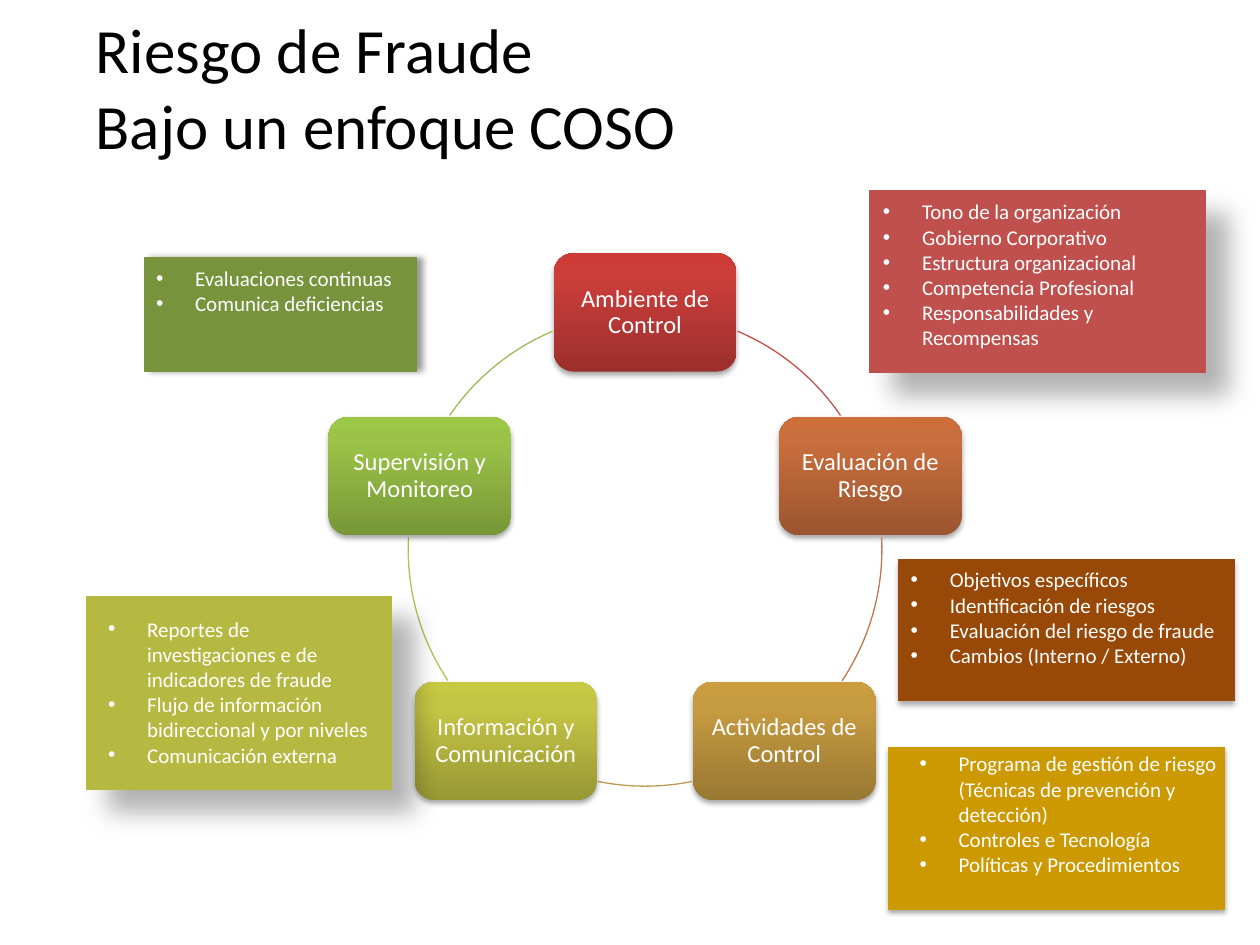
from dataclasses import dataclass
from math import cos, radians, sin

from lxml.etree import SubElement
from pptx import Presentation
from pptx.dml.color import RGBColor
from pptx.enum.shapes import MSO_SHAPE as Kind
from pptx.enum.text import MSO_ANCHOR as Anchor, MSO_AUTO_SIZE as Auto, PP_ALIGN as Align
from pptx.oxml import parse_xml
from pptx.oxml.ns import nsdecls, qn
from pptx.util import Inches, Pt

FONT = "Calibri"
MID_X, MID_Y, RADIUS = 5.12, 4.36, 1.88
NODE_W, NODE_H = 1.45, 0.94
HEX = {
    "black": "000000", "white": "FFFFFF", "red": "C0504D", "brown": "984807",
    "gold": "CC9900", "lime": "B6B941", "green": "77933C",
}


@dataclass
class Shade:
    alpha: int
    blur: float
    dist: float
    angle: int


@dataclass
class Node:
    text: str
    grad: tuple[str, str, str]
    line: str
    arc: tuple[float, float]  # degrees clockwise from the right


@dataclass
class Note:
    box: tuple[float, float, float, float]
    text_box: tuple[float, float, float, float]
    fill: str
    shade: Shade
    items: list[str]
    align: Align = Align.LEFT


SOFT = Shade(35, 3.1, 1.8, 90)
DEEP = Shade(30, 15, 18, 45)

NODES = [
    Node("Ambiente de Control", ("9C2F2D", "CB3E3A", "CE3B37"), "C0504D", (293, 325.6)),
    Node("Evaluación de Riesgo", ("9B552F", "C96E3D", "CD6E3B"), "BF7750", (357.1, 33.7)),
    Node("Actividades de Control", ("997832", "C79C41", "CB9D3F"), "BD9B53", (78.5, 101.5)),
    Node("Información y Comunicación", ("989835", "C5C545", "C8C942"), "BCBC56",
         (146.3, 182.9)),
    Node("Supervisión y Monitoreo", ("779737", "9BC348", "9DC746"), "9BBB59", (214.4, 247)),
]

NOTES = [
    Note((6.9, 1.51, 2.67, 1.45), (6.91, 1.53, 2.66, 1.62), "red", DEEP,
         ["Tono de la organización", "Gobierno Corporativo", "Estructura organizacional",
          "Competencia Profesional", "Responsabilidades y Recompensas"]),
    Note((7.13, 4.44, 2.67, 1.12), (7.13, 4.45, 2.67, 0.91), "brown",
         Shade(32, 3.5, 2.2, 90),
         ["Objetivos específicos", "Identificación de riesgos",
          "Evaluación del riesgo de fraude", "Cambios (Interno / Externo)"],
         Align.JUSTIFY),
    Note((7.05, 5.93, 2.67, 1.29), (7.2, 5.91, 2.67, 1.41), "gold", SOFT,
         ["Programa de gestión de riesgo (Técnicas de prevención y detección)",
          "Controles e Tecnología", "Políticas y Procedimientos"]),
    Note((0.68, 4.73, 2.43, 1.54), (0.76, 4.84, 2.32, 1.01), "lime", DEEP,
         ["Reportes de investigaciones e de indicadores de fraude",
          "Flujo de información bidireccional y por niveles", "Comunicación externa"]),
    Note((1.14, 2.04, 2.17, 0.91), (1.14, 2.06, 2.17, 0.5), "green", Shade(40, 4, 3, 0),
         ["Evaluaciones continuas", "Comunica deficiencias"]),
]


def rgb(name: str) -> RGBColor:
    return RGBColor.from_string(HEX[name])


def set_font(para, size: float, color: str) -> None:
    para.font.name = FONT
    para.font.size = Pt(size)
    para.font.color.rgb = rgb(color)


def add_shape(slide, kind: Kind, box: tuple):
    shape = slide.shapes.add_shape(kind, *map(Inches, box))
    shape.shadow.inherit = False
    return shape


def set_shade(shape, shade: Shade) -> None:
    effects = shape._element.spPr.find(qn("a:effectLst"))
    outer = SubElement(effects, qn("a:outerShdw"), blurRad=str(Pt(shade.blur)),
                       dist=str(Pt(shade.dist)), dir=str(shade.angle * 60000),
                       rotWithShape="0")
    color = SubElement(outer, qn("a:srgbClr"), val=HEX["black"])
    SubElement(color, qn("a:alpha"), val=str(shade.alpha * 1000))


def set_grad(shape, colors: tuple[str, str, str]) -> None:
    """Fill from bottom to top with stops at 0, 80 and 100 percent."""
    stops = "".join(f'<a:gs pos="{pos}000"><a:srgbClr val="{color}"/></a:gs>'
                    for pos, color in zip((0, 80, 100), colors))
    grad = parse_xml(f'<a:gradFill {nsdecls("a")} rotWithShape="1"><a:gsLst>{stops}</a:gsLst>'
                     '<a:lin ang="16200000" scaled="0"/></a:gradFill>')
    shape._element.spPr.find(qn("a:prstGeom")).addnext(grad)


def add_node(slide, node: Node, turn: float) -> None:
    left = MID_X + RADIUS * cos(radians(turn)) - NODE_W / 2
    top = MID_Y + RADIUS * sin(radians(turn)) - NODE_H / 2
    shape = add_shape(slide, Kind.ROUNDED_RECTANGLE, (left, top, NODE_W, NODE_H))
    set_grad(shape, node.grad)
    shape.line.fill.background()
    set_shade(shape, SOFT)
    frame = shape.text_frame
    frame.word_wrap = True
    frame.vertical_anchor = Anchor.MIDDLE
    frame.margin_left = frame.margin_right = Inches(0.1)
    frame.margin_top = frame.margin_bottom = Inches(0.1)
    frame.text = node.text
    para = frame.paragraphs[0]
    para.alignment = Align.CENTER
    para.line_spacing = 0.9
    set_font(para, 14, "white")


def add_arc(slide, node: Node) -> None:
    arc = add_shape(slide, Kind.ARC,
                    (MID_X - RADIUS, MID_Y - RADIUS, 2 * RADIUS, 2 * RADIUS))
    for i, angle in enumerate(node.arc):
        arc.adjustments[i] = angle * 0.6  # 60000 units a degree, scaled by 100000
    arc.fill.background()
    arc.line.color.rgb = RGBColor.from_string(node.line)
    arc.line.width = Pt(0.75)


def add_bullet(para) -> None:
    props = para._p.get_or_add_pPr()
    props.set("marL", str(Inches(0.31)))
    props.set("indent", str(Inches(-0.31)))
    SubElement(props, qn("a:buFont"), typeface="Arial")
    SubElement(props, qn("a:buChar"), char="•")


def add_note(slide, note: Note) -> None:
    shape = add_shape(slide, Kind.LINE_CALLOUT_1_ACCENT_BAR, note.box)
    shape.fill.solid()
    shape.fill.fore_color.rgb = rgb(note.fill)
    shape.line.fill.background()
    set_shade(shape, note.shade)
    frame = slide.shapes.add_textbox(*map(Inches, note.text_box)).text_frame
    frame.word_wrap = True
    frame.auto_size = Auto.SHAPE_TO_FIT_TEXT
    frame.text = "\n".join(note.items)
    for para in frame.paragraphs:
        add_bullet(para)
        para.alignment = note.align
        set_font(para, 12, "white")


def add_title(slide) -> None:
    title = slide.shapes.title
    title.left, title.top, title.width, title.height = map(Inches, (0.66, 0.06, 9.31, 1.25))
    frame = title.text_frame
    frame.text = "Riesgo de Fraude\vBajo un enfoque COSO"
    frame.vertical_anchor = Anchor.MIDDLE
    frame.auto_size = Auto.NONE
    para = frame.paragraphs[0]
    para.alignment = Align.LEFT
    set_font(para, 36, "black")


def main() -> None:
    deck = Presentation()
    deck.slide_width, deck.slide_height = Inches(10), Inches(7.5)
    slide = deck.slides.add_slide(deck.slide_layouts[5])
    add_title(slide)
    for i, node in enumerate(NODES):
        add_node(slide, node, i * 360 / len(NODES) - 90)
        add_arc(slide, node)
    for note in NOTES:
        add_note(slide, note)
    deck.save("out.pptx")


if __name__ == "__main__":
    main()
